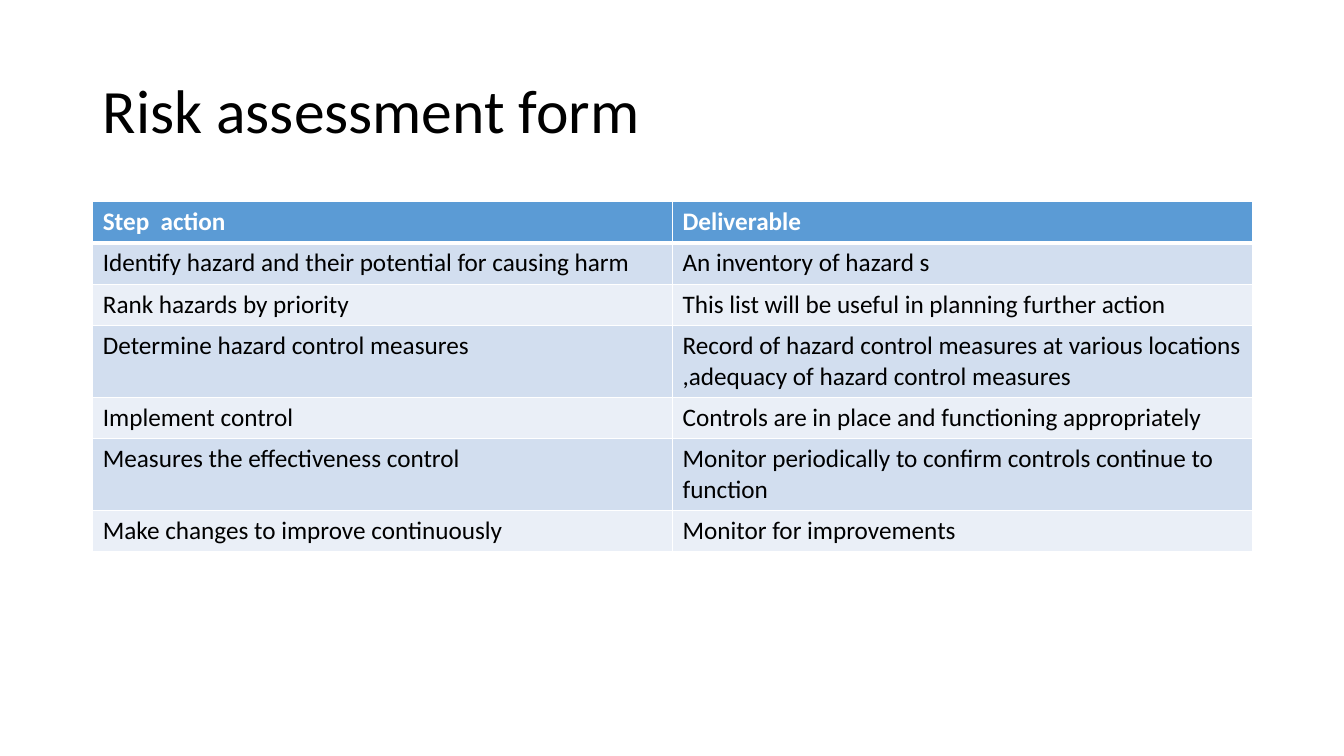
from lxml.etree import SubElement
from pptx import Presentation
from pptx.dml.color import RGBColor
from pptx.enum.text import MSO_ANCHOR, PP_ALIGN
from pptx.oxml.ns import qn
from pptx.util import Inches, Pt

COLORS = {
    "text": "000000",
    "header_text": "FFFFFF",
    "header": "5B9BD5",
    "odd_row": "D2DEEF",
    "even_row": "EAEFF7",
    "border": "FFFFFF",
}
FONT = "Calibri"
SLIDE_WIDTH, SLIDE_HEIGHT = Inches(13.33), Inches(7.5)
MARGIN = Inches(0.92)
CONTENT_WIDTH = Inches(11.5)
ROW_HEIGHT = Inches(0.41)

STEPS = [
    ("Step  action", "Deliverable"),
    ("Identify hazard and their potential for causing harm", "An inventory of hazard s"),
    ("Rank hazards by priority", "This list will be useful in planning further action"),
    ("Determine hazard control measures",
     "Record of hazard control measures at various locations ,adequacy of hazard control measures"),
    ("Implement control", "Controls are in place and functioning appropriately"),
    ("Measures the effectiveness control",
     "Monitor periodically to confirm controls continue to function"),
    ("Make changes to improve continuously", "Monitor for improvements"),
]


def format_runs(paragraph, size, color, bold=False):
    for run in paragraph.runs:
        run.font.name = FONT
        run.font.size = Pt(size)
        run.font.bold = bold
        run.font.color.rgb = RGBColor.from_string(COLORS[color])


def set_borders(cell, bottom_width):
    """Draw the four cell edges; call before filling, as the schema puts lines first."""
    properties = cell._tc.get_or_add_tcPr()
    for edge, width in (("lnL", 1), ("lnR", 1), ("lnT", 1), ("lnB", bottom_width)):
        line = SubElement(properties, qn(f"a:{edge}"), w=str(Pt(width)))
        fill = SubElement(line, qn("a:solidFill"))
        SubElement(fill, qn("a:srgbClr"), val=COLORS["border"])


def place_title(slide, text, left, top, width, height):
    title = slide.shapes.title
    title.left, title.top, title.width, title.height = left, top, width, height
    title.text_frame.text = text
    title.text_frame.vertical_anchor = MSO_ANCHOR.MIDDLE
    paragraph = title.text_frame.paragraphs[0]
    paragraph.alignment = PP_ALIGN.LEFT
    paragraph.line_spacing = 0.9
    format_runs(paragraph, 44, "text")


def place_table(slide, rows, left, top, width):
    columns = len(rows[0])
    table = slide.shapes.add_table(
        len(rows), columns, left, top, width, ROW_HEIGHT * len(rows)).table
    for row_index, row in enumerate(rows):
        table.rows[row_index].height = ROW_HEIGHT
        is_header = row_index == 0
        band = "header" if is_header else "odd_row" if row_index % 2 else "even_row"
        for column_index, text in enumerate(row):
            cell = table.cell(row_index, column_index)
            cell.text_frame.text = text
            format_runs(cell.text_frame.paragraphs[0], 18,
                        "header_text" if is_header else "text", is_header)
            set_borders(cell, 3 if is_header else 1)
            cell.fill.solid()
            cell.fill.fore_color.rgb = RGBColor.from_string(COLORS[band])


def main():
    presentation = Presentation()
    presentation.slide_width, presentation.slide_height = SLIDE_WIDTH, SLIDE_HEIGHT
    slide = presentation.slides.add_slide(presentation.slide_layouts.get_by_name("Title Only"))
    place_title(slide, "Risk assessment form",
                MARGIN, Inches(0.4), CONTENT_WIDTH, Inches(1.45))
    place_table(slide, STEPS, MARGIN, Inches(2), CONTENT_WIDTH)
    presentation.save("out.pptx")


if __name__ == "__main__":
    main()
